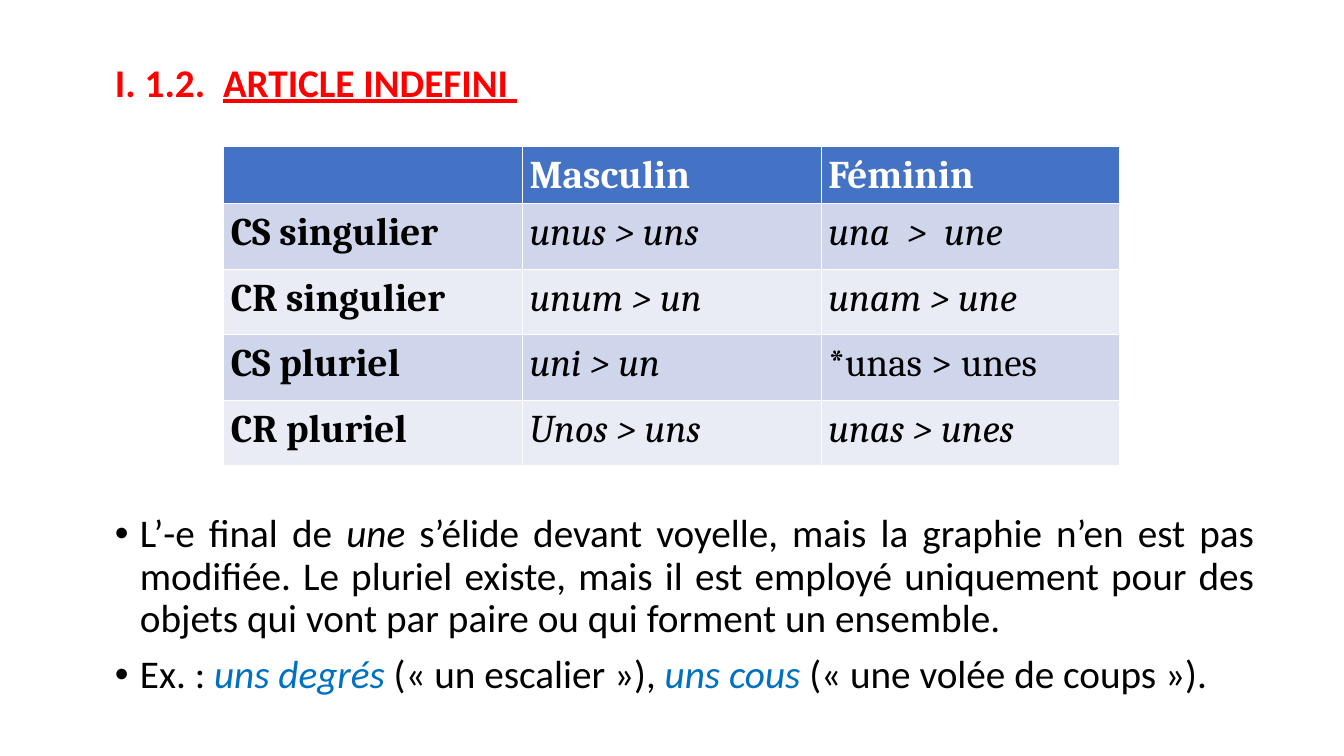
"""Build a slide on the Old French indefinite article: a declension table and two notes."""
from pptx import Presentation
from pptx.dml.color import RGBColor
from pptx.enum.text import MSO_ANCHOR as ANCHOR, PP_ALIGN as ALIGN
from pptx.oxml import parse_xml
from pptx.oxml.ns import nsdecls
from pptx.util import Inches, Pt


def color(value):
    return RGBColor.from_string(value)


def add_run(p, text, rgb="000000", name="Calibri", **formats):
    r = p.add_run()
    r.text = text
    r.font.color.rgb = color(rgb)
    for key, value in {"name": name, "size": Pt(28), "bold": False, **formats}.items():
        setattr(r.font, key, value)


prs = Presentation()
prs.slide_width, prs.slide_height = Inches(13.33), Inches(7.5)
s = prs.slides.add_slide(prs.slide_layouts[5])

title = s.shapes.title
title.left, title.top = Inches(1.04), Inches(0.58)
title.width, title.height = Inches(11.5), Inches(0.55)
tf = title.text_frame
tf.vertical_anchor = ANCHOR.TOP
p = tf.paragraphs[0]
p.alignment, p.line_spacing = ALIGN.LEFT, 0.9
add_run(p, "I. 1.2.  ", "FF0000", bold=True)
add_run(p, "ARTICLE INDEFINI ", "FF0000", bold=True, underline=True)

rows = [
    ["", "Masculin", "Féminin"],
    ["CS singulier", "unus > uns", "una  >  une"],
    ["CR singulier", "unum > un", "unam > une"],
    ["CS pluriel", "uni > un", "*unas > unes"],
    ["CR pluriel", "Unos > uns", "unas > unes"],
]
table = s.shapes.add_table(5, 3, Inches(2.22), Inches(1.45), Inches(8.89), Inches(3.18)).table
for i, row in enumerate(rows):
    table.rows[i].height = Inches(0.65 if i else 0.57)
    for j, text in enumerate(row):
        cell = table.cell(i, j)
        cell.fill.solid()
        fill = "4472C4" if i == 0 else "CFD5EA" if i % 2 else "E9EBF5"
        cell.fill.fore_color.rgb = color(fill)
        cell.margin_left = cell.margin_right = Inches(0.07)
        cell.margin_top = cell.margin_bottom = 0
        if text:
            p = cell.text_frame.paragraphs[0]
            p.alignment, p.line_spacing = ALIGN.JUSTIFY, 1.15
            heading = i == 0 or j == 0
            italic = not heading and not text.startswith("*")
            add_run(p, text, "000000" if i else "FFFFFF", "Cambria", bold=heading, italic=italic)

BLUE = {"rgb": "0070C0", "italic": True}
notes = [
    [("L’-e final de ", {}), ("une", {"italic": True}),
     (" s’élide devant voyelle, mais la graphie n’en est pas modifiée. Le pluriel existe, "
      "mais il est employé uniquement pour des objets qui vont par paire ou qui forment "
      "un ensemble.", {})],
    [("Ex. : ", {}), ("uns degrés ", BLUE), ("(« un escalier »), ", {}),
     ("uns cous ", BLUE), ("(« une volée de coups »).", {})],
]
tf = s.shapes.add_textbox(Inches(1.04), Inches(5.05), Inches(11.5), Inches(2)).text_frame
tf.word_wrap = True
for i, note in enumerate(notes):
    p = tf.add_paragraph() if i else tf.paragraphs[0]
    p.alignment, p.line_spacing = ALIGN.JUSTIFY, 0.9
    p.space_before = Pt(10 if i else 0)
    pPr = p._p.get_or_add_pPr()
    pPr.set("marL", str(Inches(0.25)))
    pPr.set("indent", str(Inches(-0.25)))
    for tag in ('buFont %s typeface="Arial"', 'buChar %s char="•"'):
        pPr.append(parse_xml(f"<a:{tag % nsdecls('a')}/>"))
    for text, formats in note:
        add_run(p, text, **formats)

prs.save("out.pptx")
